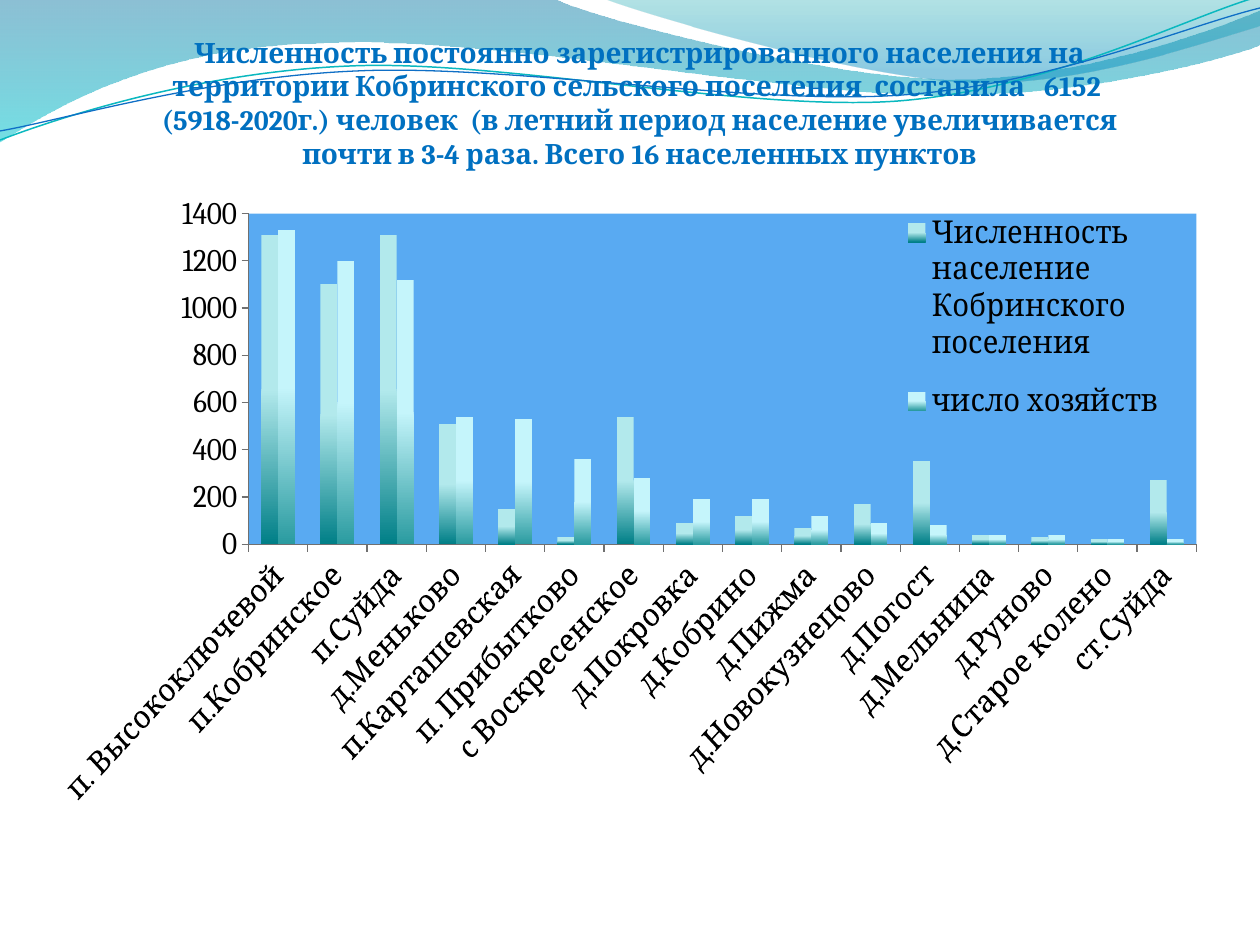
from lxml import etree
from pptx import Presentation
from pptx import util as u
from pptx.chart.data import CategoryChartData
from pptx.dml.color import RGBColor
from pptx.enum import chart as charts, text
from pptx.oxml.ns import qn

# Content
TITLE = ("Численность постоянно зарегистрированного населения на территории "
         "Кобринского сельского поселения  составила   6152  (5918-2020г.) человек  "
         "(в летний период население увеличивается почти в 3-4 раза. "
         "Всего 16 населенных пунктов")
SERIES_NAMES = ("Численность население  Кобринского поселения", "число хозяйств")
SETTLEMENTS = [  # name, population, households
    ("п. Высокоключевой", 1310, 1330),
    ("п.Кобринское", 1100, 1200),
    ("п.Суйда", 1310, 1120),
    ("д.Меньково", 510, 540),
    ("п.Карташевская", 150, 530),
    ("п. Прибытково", 30, 360),
    ("с Воскресенское", 540, 280),
    ("д.Покровка", 90, 190),
    ("д.Кобрино", 120, 190),
    ("д.Пижма", 70, 120),
    ("д.Новокузнецово", 170, 90),
    ("д.Погост", 350, 80),
    ("д.Мельница", 40, 40),
    ("д.Руново", 30, 40),
    ("д.Старое колено", 20, 20),
    ("ст.Суйда", 270, 20),
]

# Style
FONT = "Cambria"
BLACK = RGBColor(0x00, 0x00, 0x00)
TITLE_BLUE = RGBColor(0x00, 0x70, 0xC0)
PLOT_BLUE = RGBColor(0x59, 0xAA, 0xF2)
AXIS_GRAY = RGBColor(0x70, 0x70, 0x70)
LINE_TEAL = RGBColor(0x0A, 0xB8, 0xBF)
LINE_BLUE = RGBColor(0x0F, 0x6F, 0xC6)
WAVE_BLUE = RGBColor(0x00, 0x74, 0xA1)
WAVE_CYAN = RGBColor(0x00, 0xC6, 0xCF)
CREST_TEAL = RGBColor(0x00, 0xA1, 0xA9)
CREST_BLUE = RGBColor(0x00, 0x8B, 0xBF)
PALE_TEAL = RGBColor(0xB2, 0xE9, 0xEC)
DARK_TEAL = RGBColor(0x00, 0x7F, 0x87)
PALE_CYAN = RGBColor(0xC5, 0xF5, 0xFB)
MID_TEAL = RGBColor(0x2A, 0x9B, 0xA0)

# Gradient stops, top to bottom: position %, colour, opacity %
BAR_GRADIENTS = [
    [(0, PALE_TEAL, 100), (50, PALE_TEAL, 100), (100, DARK_TEAL, 100)],
    [(0, PALE_CYAN, 100), (50, PALE_CYAN, 100), (100, MID_TEAL, 100)],
]

# Wave outlines in px: one point is a straight step, three points a cubic curve
BANDS = [
    ([[(0, 0)], [(554, -1)],
      [(600, 21), (837, 79), (955, 79)], [(1075, 79), (1207, 33), (1260, 11)],
      [(1261, 45)],
      [(1237, 55), (1096, 96), (940, 95)], [(784, 95), (481, 35), (324, 43)],
      [(163, 45), (58, 105), (-1, 142)]],
     [(0, WAVE_BLUE, 45), (100, WAVE_CYAN, 55)]),
    ([[(604, -1)],
      [(641, 14), (859, 78), (969, 82)], [(1079, 87), (1211, 40), (1260, 26)],
      [(1260, 0)]],
     [(0, CREST_TEAL, 30), (80, CREST_BLUE, 45)]),
]
WAVE_LINES = [
    ([[(0, 140)], [(60, 117), (199, 72), (349, 66)], [(498, 59), (747, 112), (898, 101)],
      [(1050, 89), (1182, 19), (1257, -3)]], LINE_TEAL, 0.85),
    ([[(0, 131)], [(59, 121), (207, 77), (357, 71)], [(508, 64), (752, 106), (903, 95)],
      [(1053, 84), (1186, 26), (1260, 8)]], LINE_BLUE, 0.75),
]

# Geometry in px
PX = u.Inches(1) // 126
TITLE_BOX = (128, 29, 1024, 149)
CHART_BOX = (59, 186, 1138, 689)


def add_outline(slide, steps, close):
    """Draw all points as a polygon, then join each group of three into a curve."""
    start, *rest = steps
    builder = slide.shapes.build_freeform(*start[0], scale=PX)
    builder.add_line_segments([point for step in rest for point in step], close=close)
    shape = builder.convert_to_shape()
    shape.shadow.inherit = False
    segments = iter(shape._element.findall(".//" + qn("a:lnTo")))
    for step in rest:
        group = [next(segments) for _ in step]
        if len(group) == 3:
            curve = etree.Element(qn("a:cubicBezTo"))
            group[0].addprevious(curve)
            for segment in group:
                curve.append(segment[0])
                segment.getparent().remove(segment)
    return shape


def set_gradient(fill, element, stops):
    fill.gradient()
    fill.gradient_angle = 270
    stop_list = element.find(".//" + qn("a:gsLst"))
    for old_stop in list(stop_list):
        stop_list.remove(old_stop)
    for position, color, opacity in stops:
        stop = etree.SubElement(stop_list, qn("a:gs"), pos=str(position * 1000))
        rgb = etree.SubElement(stop, qn("a:srgbClr"), val=str(color))
        etree.SubElement(rgb, qn("a:alpha"), val=str(opacity * 1000))


def make_layout(x, y, w, h, inner=False):
    layout = etree.Element(qn("c:layout"))
    manual = etree.SubElement(layout, qn("c:manualLayout"))
    if inner:
        etree.SubElement(manual, qn("c:layoutTarget"), val="inner")
    for name, value in (("xMode", "edge"), ("yMode", "edge"),
                        ("x", x), ("y", y), ("w", w), ("h", h)):
        etree.SubElement(manual, qn("c:" + name), val=str(value))
    return layout


def drop_layout(element):
    for layout in element.findall(qn("c:layout")):
        element.remove(layout)


def add_waves(slide):
    for steps, stops in BANDS:
        band = add_outline(slide, steps, close=True)
        set_gradient(band.fill, band._element, stops)
        band.line.fill.background()
    for steps, color, width in WAVE_LINES:
        wave = add_outline(slide, steps, close=False)
        wave.fill.background()
        wave.line.color.rgb = color
        wave.line.width = u.Pt(width)


def add_population_chart(slide):
    names, *columns = zip(*SETTLEMENTS)
    data = CategoryChartData()
    data.categories = names
    for name, values in zip(SERIES_NAMES, columns):
        data.add_series(name, values)
    chart = slide.shapes.add_chart(charts.XL_CHART_TYPE.COLUMN_CLUSTERED,
                                   *(v * PX for v in CHART_BOX), data).chart
    chart.has_title = False
    chart.font.name = FONT
    chart.font.size = u.Pt(18)
    chart.font.color.rgb = BLACK

    # Bars
    plot = chart.plots[0]
    plot.vary_by_categories = False
    plot.gap_width = 150
    plot.overlap = 0
    for series, stops in zip(plot.series, BAR_GRADIENTS):
        set_gradient(series.format.fill, series._element, stops)

    # Axes
    for axis in (chart.category_axis, chart.value_axis):
        axis.has_major_gridlines = False
        axis.major_tick_mark = charts.XL_TICK_MARK.OUTSIDE
        axis.format.line.color.rgb = AXIS_GRAY
    chart.value_axis.minimum_scale = 0
    chart.value_axis.maximum_scale = 1400
    chart.value_axis.major_unit = 200
    chart.category_axis.tick_labels.font.size = u.Pt(18)
    chart.category_axis._element.find(
        qn("c:txPr")).find(qn("a:bodyPr")).set("rot", str(-45 * 60000))

    # Plot area
    area = chart._chartSpace.chart.plotArea
    drop_layout(area)
    area.insert(0, make_layout(0.1, 0.04, 0.9, 0.48, inner=True))
    properties = etree.SubElement(area, qn("c:spPr"))
    solid = etree.SubElement(properties, qn("a:solidFill"))
    etree.SubElement(solid, qn("a:srgbClr"), val=str(PLOT_BLUE))

    # Legend over the plot
    chart.has_legend = True
    legend = chart.legend
    legend.position = charts.XL_LEGEND_POSITION.RIGHT
    legend.include_in_layout = True
    drop_layout(legend._element)
    legend._element.find(qn("c:legendPos")).addnext(make_layout(0.72, 0.01, 0.25, 0.36))


def format_title(slide):
    title = slide.shapes.title
    title.left, title.top, title.width, title.height = (v * PX for v in TITLE_BOX)
    frame = title.text_frame
    frame.text = TITLE
    frame.word_wrap = True
    frame.auto_size = text.MSO_AUTO_SIZE.SHAPE_TO_FIT_TEXT
    frame.vertical_anchor = text.MSO_ANCHOR.TOP
    paragraph = frame.paragraphs[0]
    paragraph.alignment = text.PP_ALIGN.CENTER
    paragraph.font.name = FONT
    paragraph.font.size = u.Pt(16)
    paragraph.font.bold = True
    paragraph.font.color.rgb = TITLE_BLUE
    slide.shapes._spTree.append(title._element)  # bring to front


def main():
    presentation = Presentation()
    presentation.slide_width, presentation.slide_height = u.Inches(10), u.Inches(7.5)
    slide = presentation.slides.add_slide(presentation.slide_layouts[5])
    add_waves(slide)
    add_population_chart(slide)
    format_title(slide)
    presentation.save("out.pptx")


if __name__ == "__main__":
    main()
